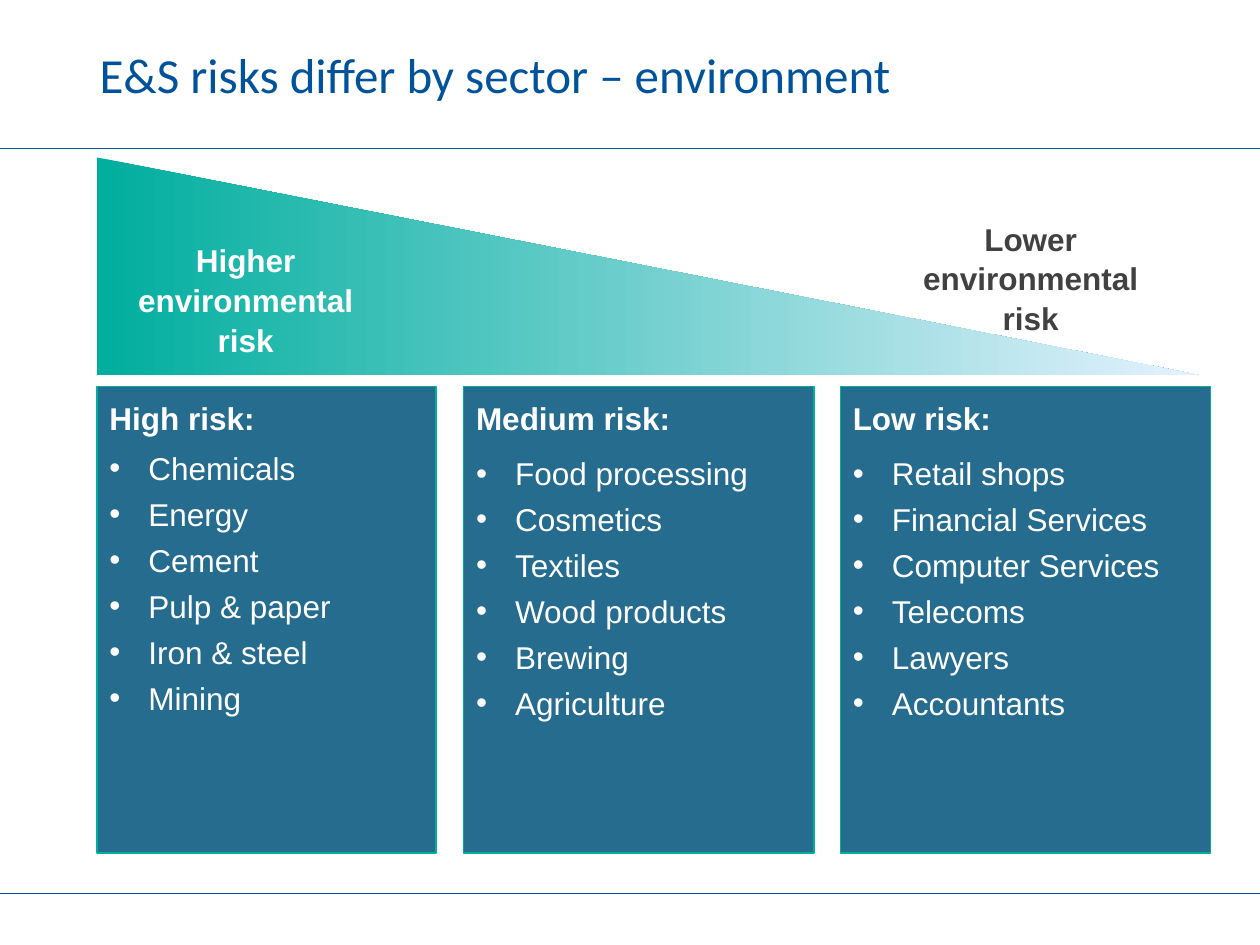
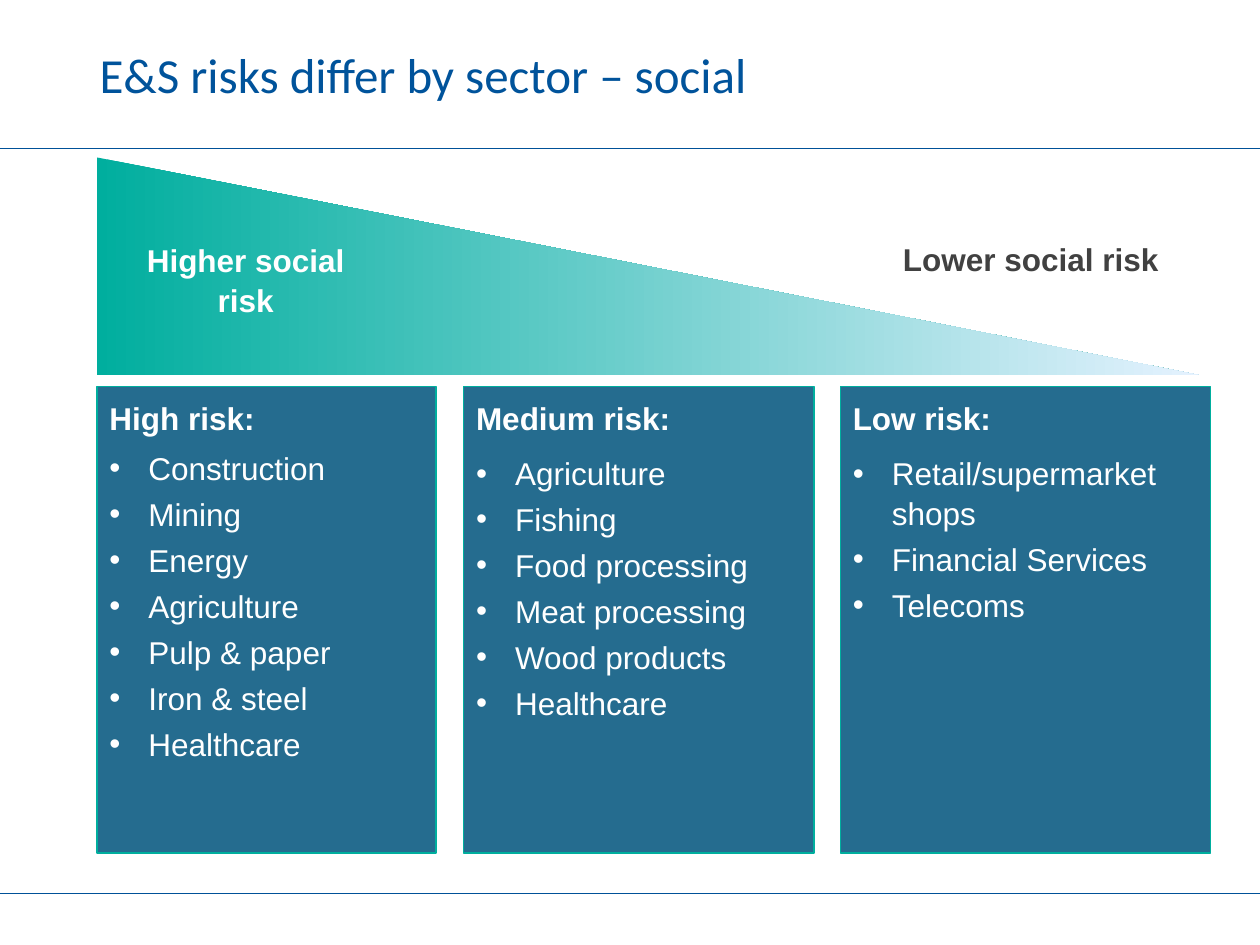
"""Builds two slides that compare environmental and social risks by sector."""
from lxml import etree
from pptx import Presentation
from pptx.dml.color import RGBColor
from pptx.enum.shapes import MSO_CONNECTOR as CONNECTOR, MSO_SHAPE as SHAPE
from pptx.enum.text import MSO_ANCHOR as ANCHOR, MSO_AUTO_SIZE as AUTO_SIZE, PP_ALIGN as ALIGN
from pptx.oxml.ns import qn
from pptx.util import Inches, Pt

RULE, TITLE, TEAL, PALE = "005198", "00539B", "00AE9E", "E5F2FF"
PANEL, WHITE, GREY = "256C8F", "FFFFFF", "414141"
RULE_TOPS = [1.18, 7.09]
COLUMNS = [
    ("High risk:", 0.77, 2.69, 6),
    ("Medium risk:", 3.68, 2.78, 9),
    ("Low risk:", 6.67, 2.94, 9),
]
SLIDES = [
    (
        "E&S risks differ by sector – environment",
        [("Higher environmental risk", 0.84, 1.85, 2.22, 1.01, WHITE),
         ("Lower environmental risk", 6.99, 1.68, 2.38, 1.01, GREY)],
        [["Chemicals", "Energy", "Cement", "Pulp & paper", "Iron & steel", "Mining"],
         ["Food processing", "Cosmetics", "Textiles", "Wood products", "Brewing", "Agriculture"],
         ["Retail shops", "Financial Services", "Computer Services", "Telecoms", "Lawyers",
          "Accountants"]],
    ),
    (
        "E&S risks differ by sector – social",
        [("Higher social risk", 0.84, 1.85, 2.22, 0.71, WHITE),
         ("Lower social risk", 6.99, 1.84, 2.38, 0.41, GREY)],
        [["Construction", "Mining", "Energy", "Agriculture", "Pulp & paper", "Iron & steel",
          "Healthcare"],
         ["Agriculture", "Fishing", "Food processing", "Meat processing", "Wood products",
          "Healthcare"],
         ["Retail/supermarket shops", "Financial Services", "Telecoms"]],
    ),
]


def rgb(value):
    return RGBColor.from_string(value)


def write(para, text, color, bold=False, font="Arial", size=18, align=ALIGN.LEFT):
    para.alignment = align
    span = para.add_run()
    span.text = text
    span.font.name, span.font.size, span.font.bold = font, Pt(size), bold
    span.font.color.rgb = rgb(color)


deck = Presentation()
deck.slide_width, deck.slide_height = Inches(10), Inches(7.5)

for heading, captions, sector_lists in SLIDES:
    page = deck.slides.add_slide(deck.slide_layouts[5])

    for top in RULE_TOPS:
        rule = page.shapes.add_connector(
            CONNECTOR.STRAIGHT, Inches(0), Inches(top), Inches(10), Inches(top))
        rule.line.color.rgb = rgb(RULE)
        rule.line.width = Pt(0.25)
        etree.SubElement(rule._element.spPr, qn("a:effectLst"))

    title = page.shapes.title
    title.left, title.top = Inches(0.79), Inches(0)
    title.width, title.height = Inches(6.46), Inches(1.18)
    frame = title.text_frame
    frame.margin_left = frame.margin_right = frame.margin_top = frame.margin_bottom = 0
    frame.auto_size = AUTO_SIZE.NONE
    frame.vertical_anchor = ANCHOR.MIDDLE
    write(frame.paragraphs[0], heading, TITLE, font="Calibri", size=28)

    wedge = page.shapes.add_shape(
        SHAPE.RIGHT_TRIANGLE, Inches(0.77), Inches(1.25), Inches(8.76), Inches(1.73))
    wedge.shadow.inherit = False
    wedge.line.fill.background()
    wedge.fill.gradient()
    wedge.fill.gradient_angle = 0
    for stop, color in zip(wedge.fill.gradient_stops, [TEAL, PALE]):
        stop.color.rgb = rgb(color)

    for text, left, top, width, height, color in captions:
        box = page.shapes.add_textbox(Inches(left), Inches(top), Inches(width), Inches(height))
        box.text_frame.word_wrap = True
        box.text_frame.auto_size = AUTO_SIZE.SHAPE_TO_FIT_TEXT
        para = box.text_frame.paragraphs[0]
        para.line_spacing = 1.05
        write(para, text, color, bold=True, align=ALIGN.CENTER)

    for (level, left, width, gap), sectors in zip(COLUMNS, sector_lists):
        panel = page.shapes.add_shape(
            SHAPE.RECTANGLE, Inches(left), Inches(3.07), Inches(width), Inches(3.7))
        panel.shadow.inherit = False
        panel.fill.solid()
        panel.fill.fore_color.rgb = rgb(PANEL)
        panel.line.color.rgb = rgb(TEAL)
        panel.line.width = Pt(0.75)
        frame = panel.text_frame
        frame.word_wrap = True
        frame.vertical_anchor = ANCHOR.TOP
        frame.margin_top, frame.margin_bottom = Inches(0.08), Inches(0.2)
        para = frame.paragraphs[0]
        para.line_spacing, para.space_after = 1.05, Pt(gap)
        write(para, level, WHITE, bold=True)
        for sector in sectors:
            para = frame.add_paragraph()
            para.line_spacing, para.space_after = 1.05, Pt(3.6)
            props = para._p.get_or_add_pPr()
            props.set("marL", str(Inches(0.31)))
            props.set("indent", str(Inches(-0.31)))
            etree.SubElement(props, qn("a:buFont"), typeface="Arial")
            etree.SubElement(props, qn("a:buChar"), char="•")
            write(para, sector, WHITE)

deck.save("out.pptx")
